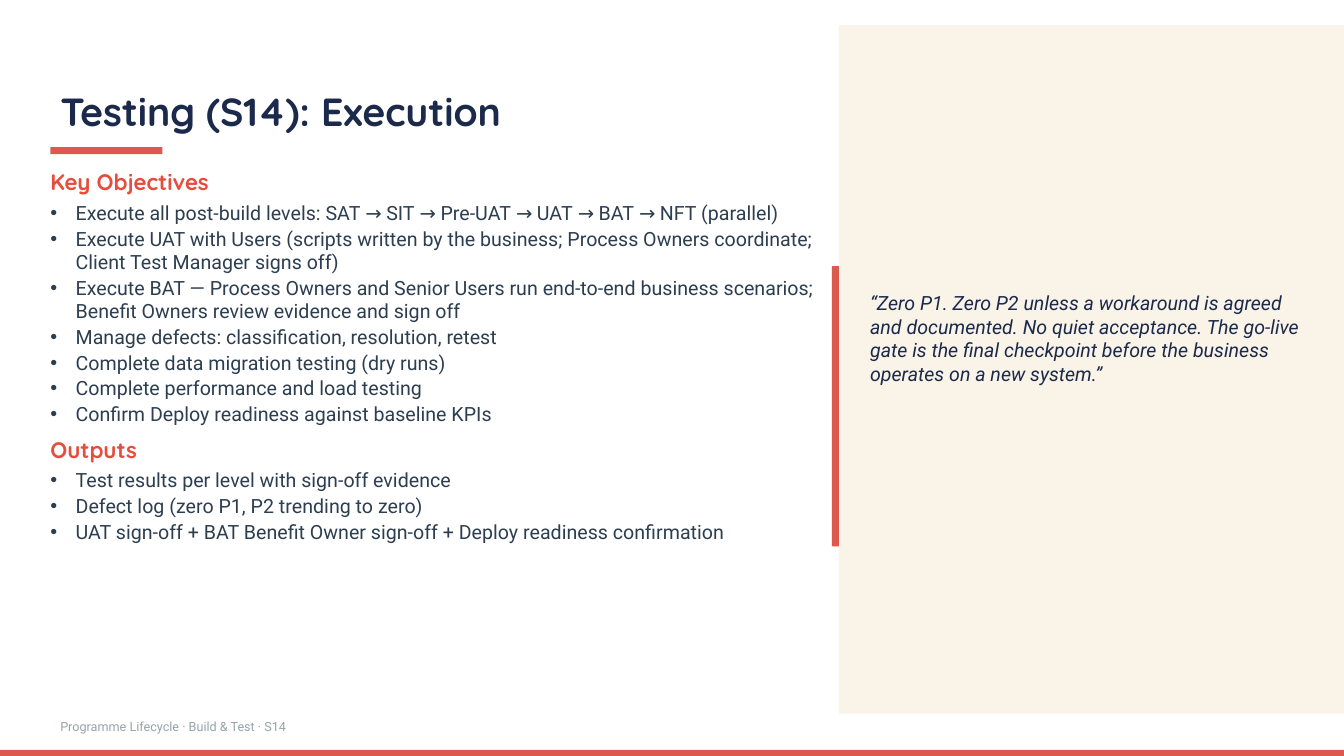
from dataclasses import dataclass

from lxml import etree
from pptx import Presentation
from pptx.dml.color import RGBColor
from pptx.enum.shapes import MSO_SHAPE
from pptx.enum.text import MSO_ANCHOR, MSO_AUTO_SIZE, PP_ALIGN
from pptx.oxml.ns import qn
from pptx.util import Inches, Pt

# Content
TITLE = "Testing (S14): Execution"
SECTIONS = [
    ("Key Objectives", [
        "Execute all post-build levels: SAT → SIT → Pre-UAT → UAT → BAT → NFT (parallel)",
        "Execute UAT with Users (scripts written by the business; Process Owners "
        "coordinate; Client Test Manager signs off)",
        "Execute BAT — Process Owners and Senior Users run end-to-end business "
        "scenarios; Benefit Owners review evidence and sign off",
        "Manage defects: classification, resolution, retest",
        "Complete data migration testing (dry runs)",
        "Complete performance and load testing",
        "Confirm Deploy readiness against baseline KPIs",
    ]),
    ("Outputs", [
        "Test results per level with sign-off evidence",
        "Defect log (zero P1, P2 trending to zero)",
        "UAT sign-off + BAT Benefit Owner sign-off + Deploy readiness confirmation",
    ]),
]
QUOTE = ("“Zero P1. Zero P2 unless a workaround is agreed and documented. "
         "No quiet acceptance. The go-live gate is the final checkpoint before "
         "the business operates on a new system.”")
FOOTER = "Programme Lifecycle · Build & Test · S14"


@dataclass(frozen=True)
class Theme:
    navy: str = "1B2A4A"
    heading: str = "E74C3C"
    body: str = "2C3E50"
    accent: str = "DD594D"
    cream: str = "FAF3E8"
    muted: str = "95A5A6"
    display_font: str = "Quicksand"
    text_font: str = "Roboto"
    title_size: float = 28
    heading_size: float = 16
    body_size: float = 14
    footer_size: float = 9


T = Theme()

# Layout in inches
W, H = 13.33, 7.5
LEFT, COLUMN_W = 0.5, 7.65
PANEL_X, PANEL_Y, PANEL_H = 8.32, 0.25, 6.83
BAR, STRIPE = 0.07, 0.06
INDENT = 0.25


def place(sp, x, y, w, h):
    sp.left, sp.top, sp.width, sp.height = map(Inches, (x, y, w, h))


def set_frame(tf, anchor=MSO_ANCHOR.TOP, insets=(0.1, 0.05, 0.1, 0.05)):
    tf.word_wrap = True
    tf.auto_size = MSO_AUTO_SIZE.NONE
    tf.vertical_anchor = anchor
    tf.margin_left, tf.margin_top, tf.margin_right, tf.margin_bottom = map(Inches, insets)


def write(tf, text, size=T.body_size, font=T.text_font, color=T.body,
          bold=False, italic=False, bullet=False, before=0, after=0):
    p = tf.add_paragraph() if tf.text else tf.paragraphs[0]
    pPr = p._p.get_or_add_pPr()
    indent = Inches(INDENT) if bullet else 0
    pPr.set("marL", str(indent))
    pPr.set("indent", str(-indent))
    if bullet:
        etree.SubElement(pPr, qn("a:buFont"), typeface="Arial")
        etree.SubElement(pPr, qn("a:buChar"), char="•")
    else:
        etree.SubElement(pPr, qn("a:buNone"))
    p.alignment = PP_ALIGN.LEFT
    p.space_before, p.space_after = Pt(before), Pt(after)
    r = p.add_run()
    r.text = text
    r.font.size, r.font.name = Pt(size), font
    r.font.bold, r.font.italic = bold, italic
    r.font.color.rgb = RGBColor.from_string(color)


def add_rect(s, x, y, w, h, fill=T.accent):
    sp = s.shapes.add_shape(MSO_SHAPE.RECTANGLE, *map(Inches, (x, y, w, h)))
    sp.shadow.inherit = False
    sp.fill.solid()
    sp.fill.fore_color.rgb = RGBColor.from_string(fill)
    sp.line.fill.background()
    return sp


def main():
    prs = Presentation()
    prs.slide_width, prs.slide_height = Inches(W), Inches(H)
    s = prs.slides.add_slide(prs.slide_layouts[1])
    title, body = s.placeholders

    # Title
    place(title, LEFT, 0.76, COLUMN_W, 0.62)
    set_frame(title.text_frame, MSO_ANCHOR.BOTTOM)
    write(title.text_frame, TITLE, size=T.title_size, font=T.display_font,
          color=T.navy, bold=True)

    # Objectives and outputs
    place(body, LEFT, 1.67, COLUMN_W, 5.35)
    tf = body.text_frame
    set_frame(tf, insets=(0, 0, 0, 0))
    for i, (heading, items) in enumerate(SECTIONS):
        write(tf, heading, size=T.heading_size, font=T.display_font,
              color=T.heading, bold=True, before=6 if i else 0, after=2)
        for j, item in enumerate(items):
            write(tf, item, bullet=True, before=0 if j else 2, after=1.5)

    # Quote panel
    panel = add_rect(s, PANEL_X, PANEL_Y, W - PANEL_X, PANEL_H, T.cream)
    set_frame(panel.text_frame, insets=(0.31, 2.64, 0.31, 0.31))
    write(panel.text_frame, QUOTE, color=T.navy, italic=True)

    # Footer
    footer = s.shapes.add_textbox(*map(Inches, (LEFT, 7.08, 5.56, 0.25)))
    set_frame(footer.text_frame, MSO_ANCHOR.BOTTOM)
    write(footer.text_frame, FOOTER, size=T.footer_size, color=T.muted)

    # Accent bars: slide foot, title underline, quote edge
    add_rect(s, 0, H - STRIPE, W, STRIPE)
    add_rect(s, LEFT, 1.46, 1.11, BAR)
    add_rect(s, PANEL_X - BAR, 2.64, BAR, 2.78)

    prs.save("out.pptx")


if __name__ == "__main__":
    main()
